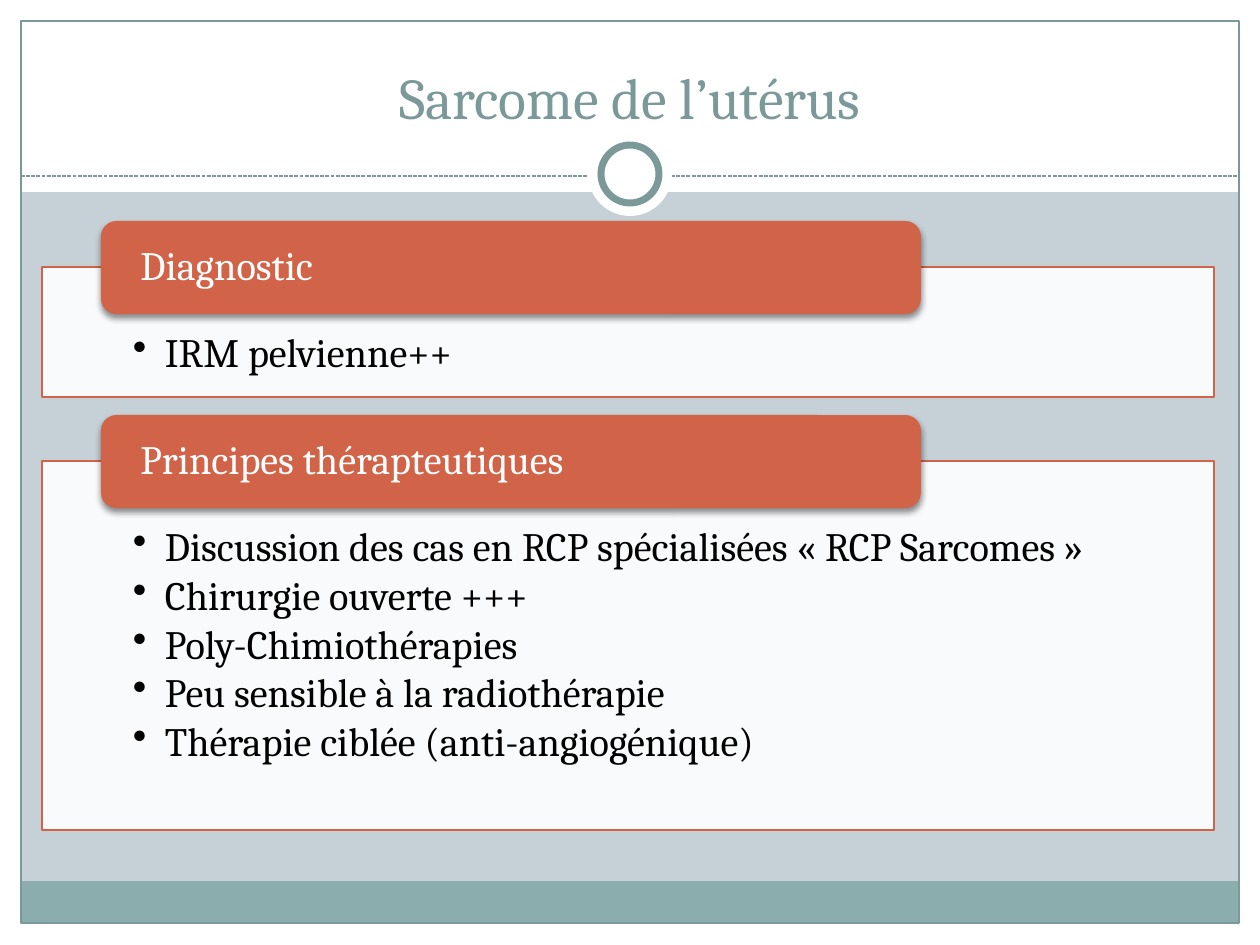
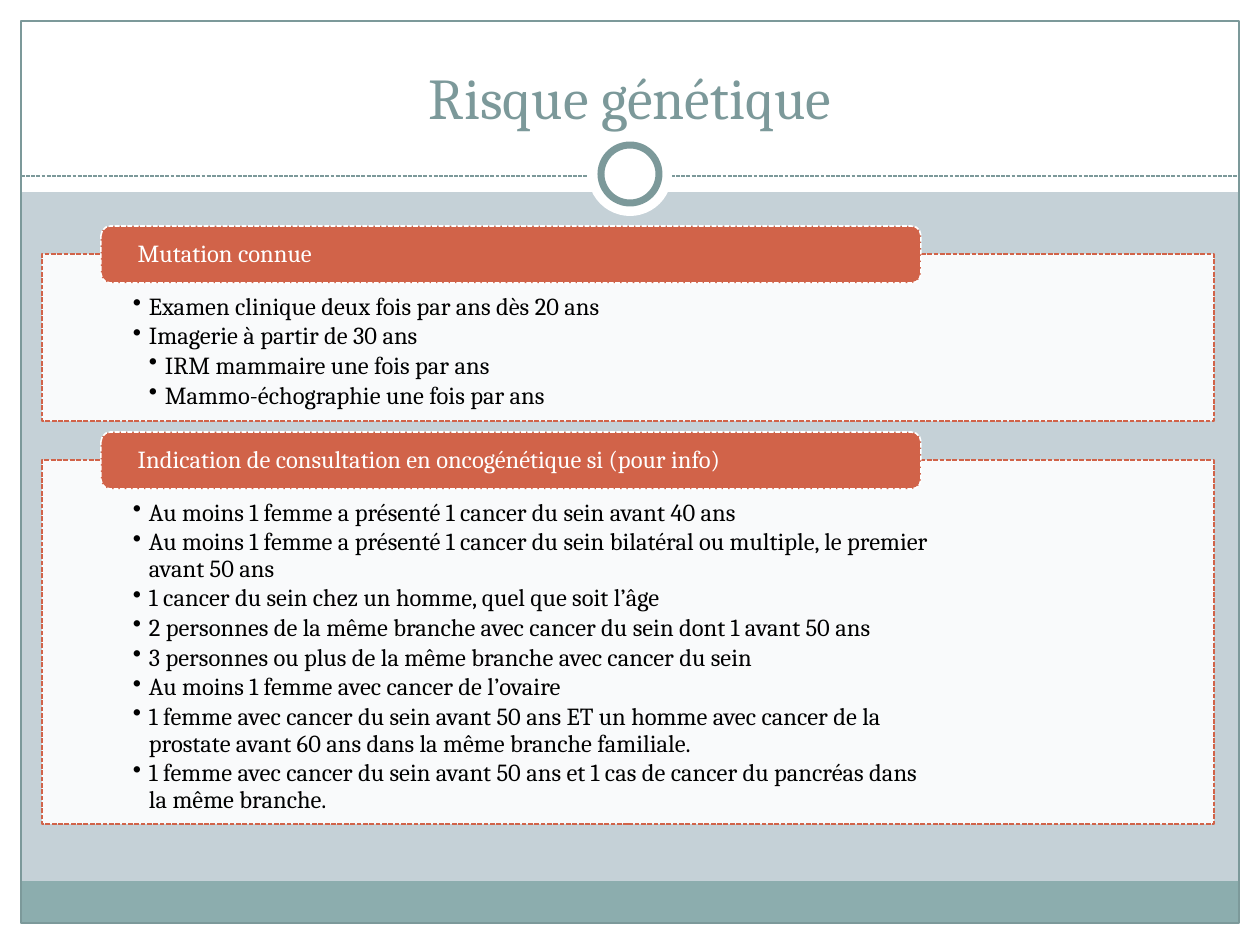
from copy import deepcopy
from dataclasses import dataclass

from lxml.etree import SubElement
from pptx import Presentation
from pptx.dml.color import RGBColor
from pptx.enum.dml import MSO_LINE
from pptx.enum.shapes import MSO_CONNECTOR, MSO_SHAPE, PP_PLACEHOLDER
from pptx.enum.text import MSO_ANCHOR, MSO_AUTO_SIZE, PP_ALIGN
from pptx.oxml.ns import qn
from pptx.util import Emu, Pt

PX_PER_INCH = 126
SLIDE_W, SLIDE_H = 1260, 945
MARGIN = 21
FONT = "Cambria"
COLORS = {
    "background": "C5D1D7",
    "white": "FFFFFF",
    "black": "000000",
    "footer": "8CADAE",
    "teal": "7C999A",
    "accent": "D16349",
}


@dataclass(frozen=True)
class Box:
    left: int
    top: int
    width: int
    height: int


@dataclass(frozen=True)
class Style:
    font_size: int
    first_top: int
    gap: int
    heading_height: int
    heading_inset: int
    body_insets: tuple[int, int, int, int]
    bullet_indent: int
    outline_width: float
    dashed: bool


@dataclass(frozen=True)
class Item:
    text: str
    level: int = 0


@dataclass(frozen=True)
class Section:
    heading: str
    body_height: int
    items: list[Item]


@dataclass(frozen=True)
class Topic:
    title: str
    style: Style
    sections: list[Section]


LARGE = Style(23, 221, 18, 93, 35, (91, 66, 91, 23), 32, 0.75, False)
COMPACT = Style(14, 226, 11, 57, 34, (91, 40, 91, 14), 16, 0.9, True)

TOPICS = [
    Topic("Sarcome de l’utérus", LARGE, [
        Section("Diagnostic", 130, [Item("IRM pelvienne++")]),
        Section("Principes thérapteutiques", 369, [
            Item("Discussion des cas en RCP spécialisées « RCP Sarcomes »"),
            Item("Chirurgie ouverte +++"),
            Item("Poly-Chimiothérapies"),
            Item("Peu sensible à la radiothérapie"),
            Item("Thérapie ciblée (anti-angiogénique)"),
        ]),
    ]),
    Topic("Risque génétique", COMPACT, [
        Section("Mutation connue", 167, [
            Item("Examen clinique deux fois par ans dès 20 ans"),
            Item("Imagerie à partir de 30 ans"),
            Item("IRM mammaire une fois par ans", 1),
            Item("Mammo-échographie une fois par ans", 1),
        ]),
        Section("Indication de consultation en oncogénétique si (pour info)", 364, [
            Item("Au moins 1 femme a présenté 1 cancer du sein avant 40 ans"),
            Item("Au moins 1 femme a présenté 1 cancer du sein bilatéral ou multiple, le premier\navant 50 ans"),
            Item("1 cancer du sein chez un homme, quel que soit l’âge"),
            Item("2 personnes de la même branche avec cancer du sein dont 1 avant 50 ans"),
            Item("3 personnes ou plus de la même branche avec cancer du sein"),
            Item("Au moins 1 femme avec cancer de l’ovaire"),
            Item("1 femme avec cancer du sein avant 50 ans ET un homme avec cancer de la\nprostate avant 60 ans dans la même branche familiale."),
            Item("1 femme avec cancer du sein avant 50 ans et 1 cas de cancer du pancréas dans\nla même branche."),
        ]),
    ]),
]


def px(length: int) -> Emu:
    return Emu(round(length * 914400 / PX_PER_INCH))


def rgb(name: str) -> RGBColor:
    return RGBColor.from_string(COLORS[name])


def format_line(line, color: str, width: float, dashed: bool = False) -> None:
    line.color.rgb = rgb(color)
    line.width = Pt(width)
    if dashed:
        line.dash_style = MSO_LINE.SQUARE_DOT


def add_box(slide, kind, box: Box, fill: str | None = None, line: str | None = None,
            width: float = 0.75, dashed: bool = False, opacity: int = 100):
    shape = slide.shapes.add_shape(kind, px(box.left), px(box.top), px(box.width), px(box.height))
    shape.shadow.inherit = False
    if fill:
        shape.fill.solid()
        shape.fill.fore_color.rgb = rgb(fill)
        if opacity < 100:
            color = next(shape.element.spPr.iter(qn("a:srgbClr")))
            SubElement(color, qn("a:alpha"), val=str(opacity * 1000))
    else:
        shape.fill.background()
    if line:
        format_line(shape.line, line, width, dashed)
    else:
        shape.line.fill.background()
    return shape


def add_shadow(shape) -> None:
    effects = shape.element.spPr.find(qn("a:effectLst"))
    shadow = SubElement(effects, qn("a:outerShdw"), blurRad=str(Pt(4)), dist=str(Pt(2)),
                        dir="5400000", rotWithShape="0")
    color = SubElement(shadow, qn("a:srgbClr"), val=COLORS["black"])
    SubElement(color, qn("a:alpha"), val="45000")


def write_text(shape, items: list[Item], *, size: int, color: str, anchor,
               align=PP_ALIGN.LEFT, insets: tuple[int, int, int, int] = (13, 6, 13, 6),
               spacing: float = 1.0, after: float = 0, indent: int = 0) -> None:
    frame = shape.text_frame
    frame.word_wrap = True
    frame.auto_size = MSO_AUTO_SIZE.NONE
    frame.vertical_anchor = anchor
    frame.margin_left, frame.margin_top, frame.margin_right, frame.margin_bottom = map(px, insets)
    for index, item in enumerate(items):
        paragraph = frame.add_paragraph() if index else frame.paragraphs[0]
        paragraph.text = item.text
        paragraph.level = item.level
        paragraph.alignment = align
        paragraph.line_spacing = spacing
        paragraph.space_after = Pt(after)
        for run in paragraph.runs:
            run.font.name = FONT
            run.font.size = Pt(size)
            run.font.color.rgb = rgb(color)
        element = paragraph._p
        for line_break in element.findall(qn("a:br")):
            line_break.append(deepcopy(element.find(qn("a:r")).find(qn("a:rPr"))))
        if indent:
            properties = element.get_or_add_pPr()
            properties.set("marL", str(px(indent * (item.level + 1))))
            properties.set("indent", str(-px(indent)))
            SubElement(properties, qn("a:buChar"), char="•")


def draw_frame(slide) -> None:
    inner_w = SLIDE_W - 2 * MARGIN
    bands = [
        (Box(0, SLIDE_H - MARGIN, SLIDE_W, MARGIN), "white"),
        (Box(0, 0, SLIDE_W, 192), "white"),
        (Box(0, 0, MARGIN, SLIDE_H), "white"),
        (Box(SLIDE_W - MARGIN, 0, MARGIN, SLIDE_H), "white"),
        (Box(MARGIN, 881, inner_w, 43), "footer"),
    ]
    for box, fill in bands:
        add_box(slide, MSO_SHAPE.RECTANGLE, box, fill)
    add_box(slide, MSO_SHAPE.RECTANGLE, Box(MARGIN, MARGIN, inner_w, 902), line="teal")
    divider = slide.shapes.add_connector(
        MSO_CONNECTOR.STRAIGHT, px(MARGIN), px(176), px(SLIDE_W - MARGIN), px(176))
    format_line(divider.line, "teal", 0.75, True)
    SubElement(divider.element.spPr, qn("a:effectLst"))
    for diameter, outline in ((84, None), (58, "teal")):
        ring = Box((SLIDE_W - diameter) // 2, 174 - diameter // 2, diameter, diameter)
        add_box(slide, MSO_SHAPE.OVAL, ring, "white", outline, 4)


def move_frame_to_layout(slide, layout) -> None:
    for shape in list(slide.shapes):
        if not shape.is_placeholder:
            layout.shapes.element.append(shape.element)


def draw_section(slide, section: Section, style: Style, top: int) -> int:
    body_top = top + style.heading_height // 2
    body = add_box(slide, MSO_SHAPE.RECTANGLE, Box(42, body_top, 1172, section.body_height),
                   "white", "accent", style.outline_width, style.dashed, 90)
    write_text(body, section.items, size=style.font_size, color="black", anchor=MSO_ANCHOR.TOP,
               insets=style.body_insets, spacing=0.9, after=style.font_size * 0.13,
               indent=style.bullet_indent)
    heading = add_box(slide, MSO_SHAPE.ROUNDED_RECTANGLE, Box(101, top, 820, style.heading_height),
                      "accent", "white" if style.dashed else None, style.outline_width, style.dashed)
    if not style.dashed:
        add_shadow(heading)
    write_text(heading, [Item(section.heading)], size=style.font_size, color="white",
               anchor=MSO_ANCHOR.MIDDLE, insets=(style.heading_inset, 0, style.heading_inset, 0),
               spacing=0.9)
    return body_top + section.body_height + style.gap


def draw_topic(slide, topic: Topic) -> None:
    title = slide.shapes.title
    title.left, title.top, title.width, title.height = map(px, (42, 32, 1176, 105))
    write_text(title, [Item(topic.title)], size=33, color="teal",
               anchor=MSO_ANCHOR.BOTTOM, align=PP_ALIGN.CENTER)
    top = topic.style.first_top
    for section in topic.sections:
        top = draw_section(slide, section, topic.style, top)


def main() -> None:
    prs = Presentation()
    prs.slide_width, prs.slide_height = px(SLIDE_W), px(SLIDE_H)
    layout = prs.slide_layouts[5]
    layout.background.fill.solid()
    layout.background.fill.fore_color.rgb = rgb("background")
    for placeholder in list(layout.placeholders):
        if placeholder.placeholder_format.type != PP_PLACEHOLDER.TITLE:
            layout.shapes.element.remove(placeholder.element)
    slides = [prs.slides.add_slide(layout) for _ in TOPICS]
    draw_frame(slides[0])
    move_frame_to_layout(slides[0], layout)
    for slide, topic in zip(slides, TOPICS):
        draw_topic(slide, topic)
    prs.save("out.pptx")


if __name__ == "__main__":
    main()
